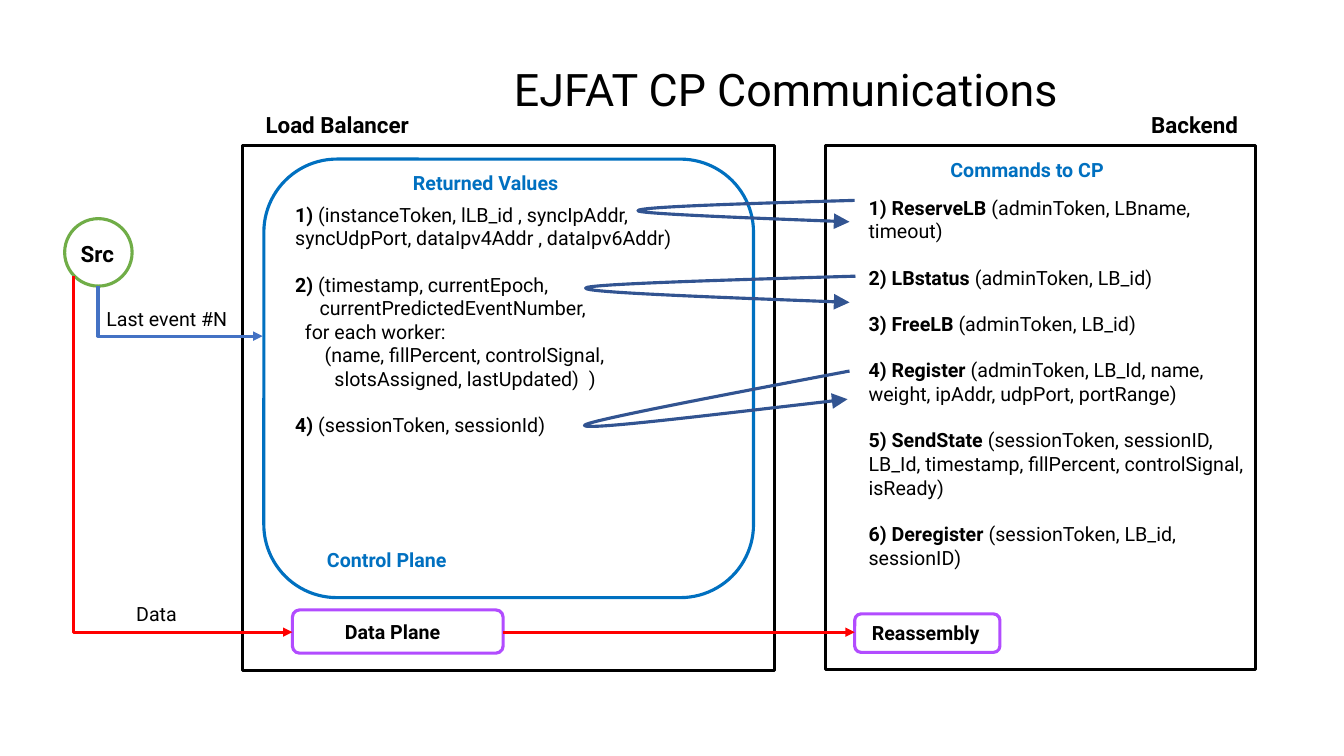
from lxml import etree
from pptx import Presentation
from pptx.dml.color import RGBColor
from pptx.enum.shapes import MSO_CONNECTOR as CONN, MSO_SHAPE as SHAPE
from pptx.enum.text import PP_ALIGN as ALIGN
from pptx.oxml.ns import qn
from pptx.util import Cm, Pt

COLORS = {"black": "000000", "white": "FFFFFF", "plane": "0070C0",
          "source": "70AD47", "event": "4472C4", "data": "FF0000",
          "stage": "B24CFF", "reply": "325491"}

prs = Presentation()
prs.slide_width, prs.slide_height = Cm(33.87), Cm(19.05)
s = prs.slides.add_slide(prs.slide_layouts[6])


def add_text(box, paragraphs, size=14, color="black", align=ALIGN.CENTER):
    """Each paragraph is (bold text, plain text, indent in spaces, gap above)."""
    tf = s.shapes.add_textbox(*map(Cm, box)).text_frame
    tf.word_wrap = True
    for i, (bold, plain, indent, gap) in enumerate(paragraphs):
        p = tf.paragraphs[0] if i == 0 else tf.add_paragraph()
        p.alignment = align
        p.space_before = Pt(16.4 if gap else 0)
        if indent:
            p._p.get_or_add_pPr().set("marL", str(Pt(3.5 * indent)))
        p.font.name, p.font.size = "Roboto", Pt(size)
        p.font.color.rgb = RGBColor.from_string(COLORS[color])
        for text, is_bold in ((bold, True), (plain, False)):
            if text:
                r = p.add_run()
                r.text = text
                r.font.bold = is_bold


def style_line(sp, color, head=None):
    """Set the outline; head is the arrowhead size, if there is one."""
    sp.line.color.rgb = RGBColor.from_string(COLORS[color])
    sp.line.width = Pt(2.25)
    if head:
        ln = sp.line._get_or_add_ln()
        etree.SubElement(ln, qn("a:tailEnd"), type="triangle", w=head, len=head)
        spPr = sp._element.spPr
        if spPr.find(qn("a:effectLst")) is None:
            etree.SubElement(spPr, qn("a:effectLst"))


# Frames, planes and the source
for kind, box, line, fill in [
    (SHAPE.RECTANGLE, (6.12, 3.66, 13.39, 13.23), "black", None),
    (SHAPE.ROUNDED_RECTANGLE, (6.65, 4.01, 12.34, 11.05), "plane", None),
    (SHAPE.OVAL, (1.63, 5.51, 1.7, 1.7), "source", None),
    (SHAPE.RECTANGLE, (20.8, 3.66, 10.85, 13.21), "black", "white"),
    (SHAPE.ROUNDED_RECTANGLE, (21.54, 15.47, 3.66, 0.97), "stage", None),
    (SHAPE.ROUNDED_RECTANGLE, (7.37, 15.37, 5.31, 1.09), "stage", "white"),
]:
    sp = s.shapes.add_shape(kind, *map(Cm, box))
    sp.shadow.inherit = False
    if fill:
        sp.fill.solid()
        sp.fill.fore_color.rgb = RGBColor.from_string(COLORS[fill])
    else:
        sp.fill.background()
    style_line(sp, line)

# Title and labels
for box, bold, plain, size, color in [
    ((12.24, 1.42, 15.14, 1.63), "", "EJFAT CP Communications", 32, "black"),
    ((5.82, 2.67, 5.36, 0.94), "Load Balancer", "", 16, "black"),
    ((28.57, 2.67, 3.07, 0.94), "Backend", "", 16, "black"),
    ((1.4, 5.92, 2.11, 0.94), "Src", "", 16, "black"),
    ((9.98, 4.17, 4.52, 0.86), "Returned Values", "", 14, "plane"),
    ((23.37, 3.86, 5.03, 0.86), "Commands to CP", "", 14, "plane"),
    ((7.49, 13.69, 4.52, 0.86), "Control Plane", "", 14, "plane"),
    ((7.47, 15.49, 4.85, 0.86), "Data Plane", "", 14, "black"),
    ((21.31, 15.52, 4.04, 0.86), "Reassembly", "", 14, "black"),
    ((2.11, 7.62, 4.19, 0.86), "", "Last event #N", 14, "black"),
    ((1.85, 15.04, 4.19, 0.86), "", "Data", 14, "black"),
]:
    add_text(box, [(bold, plain, 0, False)], size, color)

# Returned values
add_text((7.19, 4.98, 11.1, 6.76), [
    ("1)", " (instanceToken, lLB_id , syncIpAddr, "
           "syncUdpPort, dataIpv4Addr , dataIpv6Addr)", 0, False),
    ("2)", " (timestamp, currentEpoch,", 0, True),
    ("", "currentPredictedEventNumber,", 5, False),
    ("", "for each worker:", 2, False),
    ("", "(name, fillPercent, controlSignal,", 6, False),
    ("", "slotsAssigned, lastUpdated)  )", 8, False),
    ("4)", " (sessionToken, sessionId)", 0, True),
], align=ALIGN.LEFT)

# Commands
commands = [
    ("ReserveLB", "adminToken, LBname, timeout"),
    ("LBstatus", "adminToken, LB_id"),
    ("FreeLB", "adminToken, LB_id"),
    ("Register", "adminToken, LB_Id, name, weight, ipAddr, udpPort, portRange"),
    ("SendState", "sessionToken, sessionID, LB_Id, timestamp, fillPercent, "
                  "controlSignal, isReady"),
    ("Deregister", "sessionToken, LB_id, sessionID"),
]
add_text((21.64, 4.8, 10.34, 9.83),
         [(f"{n}) {name} ", f"({args})", 0, n > 1)
          for n, (name, args) in enumerate(commands, 1)], align=ALIGN.LEFT)

# Elbow arrows from the source: down, then right (a flipped elbow turned 270°)
for x1, y1, x2, y2, color in [(2.47, 7.21, 6.62, 8.47, "event"),
                              (1.85, 6.96, 7.37, 15.93, "data")]:
    cx, cy = (x1 + x2) / 2, (y1 + y2) / 2
    half_drop, half_run = (y2 - y1) / 2, (x2 - x1) / 2
    elbow = s.shapes.add_connector(CONN.ELBOW, Cm(cx + half_drop), Cm(cy - half_run),
                                   Cm(cx - half_drop), Cm(cy + half_run))
    spPr = elbow._element.spPr
    spPr.find(qn("a:xfrm")).set("rot", str(270 * 60000))
    spPr.find(qn("a:prstGeom")).set("prst", "bentConnector2")
    style_line(elbow, color, "med")

# Data plane to reassembly
data_arrow = s.shapes.add_connector(CONN.STRAIGHT, Cm(12.68), Cm(15.93),
                                    Cm(21.54), Cm(15.93))
style_line(data_arrow, "data", "med")

# Reply loops: a start point and two cubic curves of three points each
for points in [
    [(21.54, 5.05), (18.82, 5.13), (16.1, 5.21), (16.08, 5.31),
     (16.05, 5.38), (18.75, 5.49), (21.41, 5.59)],
    [(21.56, 6.96), (18.16, 7.06), (14.78, 7.16), (14.76, 7.26),
     (14.73, 7.37), (18.06, 7.49), (21.41, 7.62)],
    [(21.41, 9.35), (18.08, 9.98), (14.73, 10.62), (14.73, 10.72),
     (14.73, 10.85), (18.03, 10.44), (21.36, 10.06)],
]:
    start, *rest = [(Cm(x), Cm(y)) for x, y in points]
    builder = s.shapes.build_freeform(*start)
    builder.add_line_segments(rest, close=False)
    loop = builder.convert_to_shape()
    outline = loop._element.spPr.find(".//" + qn("a:path"))
    segments = outline.findall(qn("a:lnTo"))
    for i in range(0, len(segments), 3):
        curve = etree.SubElement(outline, qn("a:cubicBezTo"))
        for segment in segments[i:i + 3]:
            curve.append(segment[0])
            outline.remove(segment)
    loop.shadow.inherit = False
    loop.fill.background()
    style_line(loop, "reply", "lg")

prs.save("out.pptx")
